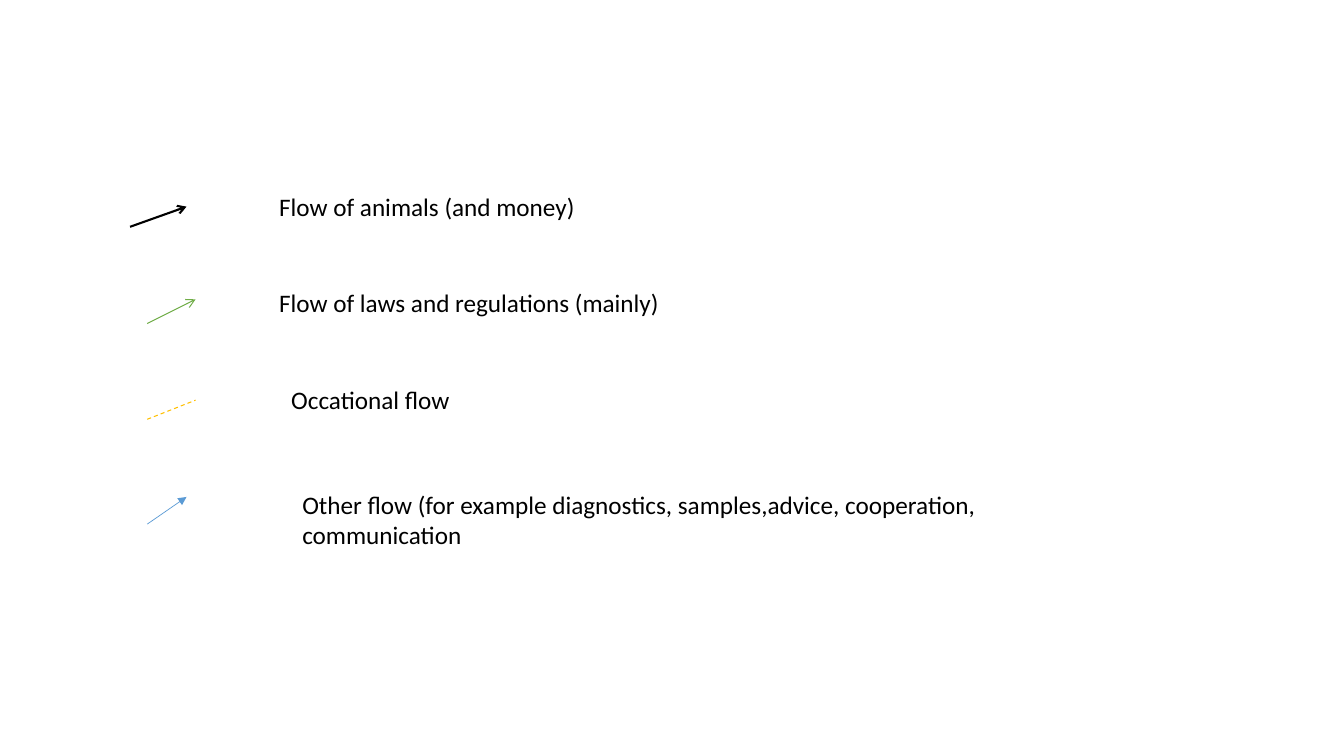
import pptx
import pptx.dml.color
import pptx.enum.dml
import pptx.enum.shapes
import pptx.enum.text
import pptx.oxml
import pptx.oxml.ns
import pptx.util

Inches = pptx.util.Inches
Color = pptx.dml.color.RGBColor
BLACK = Color(0x00, 0x00, 0x00)
GREEN = Color(0x70, 0xAD, 0x47)
GOLD = Color(0xFF, 0xC0, 0x00)
BLUE = Color(0x5B, 0x9B, 0xD5)
DASH = pptx.enum.dml.MSO_LINE.DASH
FONT = {"name": "Calibri", "size": pptx.util.Pt(18)}
FRAME = {"word_wrap": True, "auto_size": pptx.enum.text.MSO_AUTO_SIZE.SHAPE_TO_FIT_TEXT}

ROWS = [
    {"top": 1.85, "line": (0, 0.4, 0.56, 0.2), "color": BLACK, "width": 1.5, "head": "arrow",
     "box": (1.38, 3.43, 0.4), "text": "Flow of animals (and money)"},
    {"top": 2.8, "line": (0.17, 0.41, 0.65, 0.17), "color": GREEN, "width": 0.75, "head": "arrow",
     "box": (1.38, 4.03, 0.4), "text": "Flow of laws and regulations (mainly)"},
    {"top": 3.76, "line": (0.17, 0.4, 0.65, 0.21), "color": GOLD, "width": 0.75, "dash": DASH,
     "box": (1.5, 4.56, 0.4), "text": "Occational flow"},
    {"top": 4.8, "line": (0.17, 0.4, 0.56, 0.13), "color": BLUE, "width": 0.5, "head": "triangle",
     "box": (1.61, 8.36, 0.71),
     "text": "Other flow (for example diagnostics, samples,advice, cooperation, communication"},
]


def format_item(item, values):
    for name, value in values.items():
        setattr(item, name, value)


def add_arrow(slide, left, top, row):
    x1, y1, x2, y2 = row["line"]
    arrow = slide.shapes.add_connector(
        pptx.enum.shapes.MSO_CONNECTOR.STRAIGHT,
        Inches(left + x1), Inches(top + y1), Inches(left + x2), Inches(top + y2))
    arrow.line.color.rgb = row["color"]
    format_item(arrow.line, {"width": pptx.util.Pt(row["width"]), "dash_style": row.get("dash")})
    if "head" in row:
        tail = pptx.oxml.ns.qn("a:tailEnd")
        arrow.line._get_or_add_ln().append(
            pptx.oxml.parse_xml(
                '<a:tailEnd xmlns:a="http://schemas.openxmlformats.org/drawingml/2006/main"/>'))
        arrow.line._get_or_add_ln().find(tail).set("type", row["head"])
    arrow._element.spPr.append(pptx.oxml.parse_xml(
        '<a:effectLst xmlns:a="http://schemas.openxmlformats.org/drawingml/2006/main"/>'))


def add_label(slide, left, top, row):
    shift, width, height = row["box"]
    label = slide.shapes.add_textbox(
        Inches(left + shift), Inches(top), Inches(width), Inches(height))
    format_item(label.text_frame, FRAME)
    run = label.text_frame.paragraphs[0].add_run()
    run.text = row["text"]
    format_item(run.font, FONT)
    run.font.color.rgb = BLACK


def add_legend(slide, left, rows):
    for row in rows:
        add_arrow(slide, left, row["top"], row)
        add_label(slide, left, row["top"], row)


def main():
    deck = pptx.Presentation()
    format_item(deck, {"slide_width": Inches(13.33), "slide_height": Inches(7.5)})
    slide = deck.slides.add_slide(deck.slide_layouts[6])
    add_legend(slide, 1.29, ROWS)
    deck.save("out.pptx")


if __name__ == "__main__":
    main()
